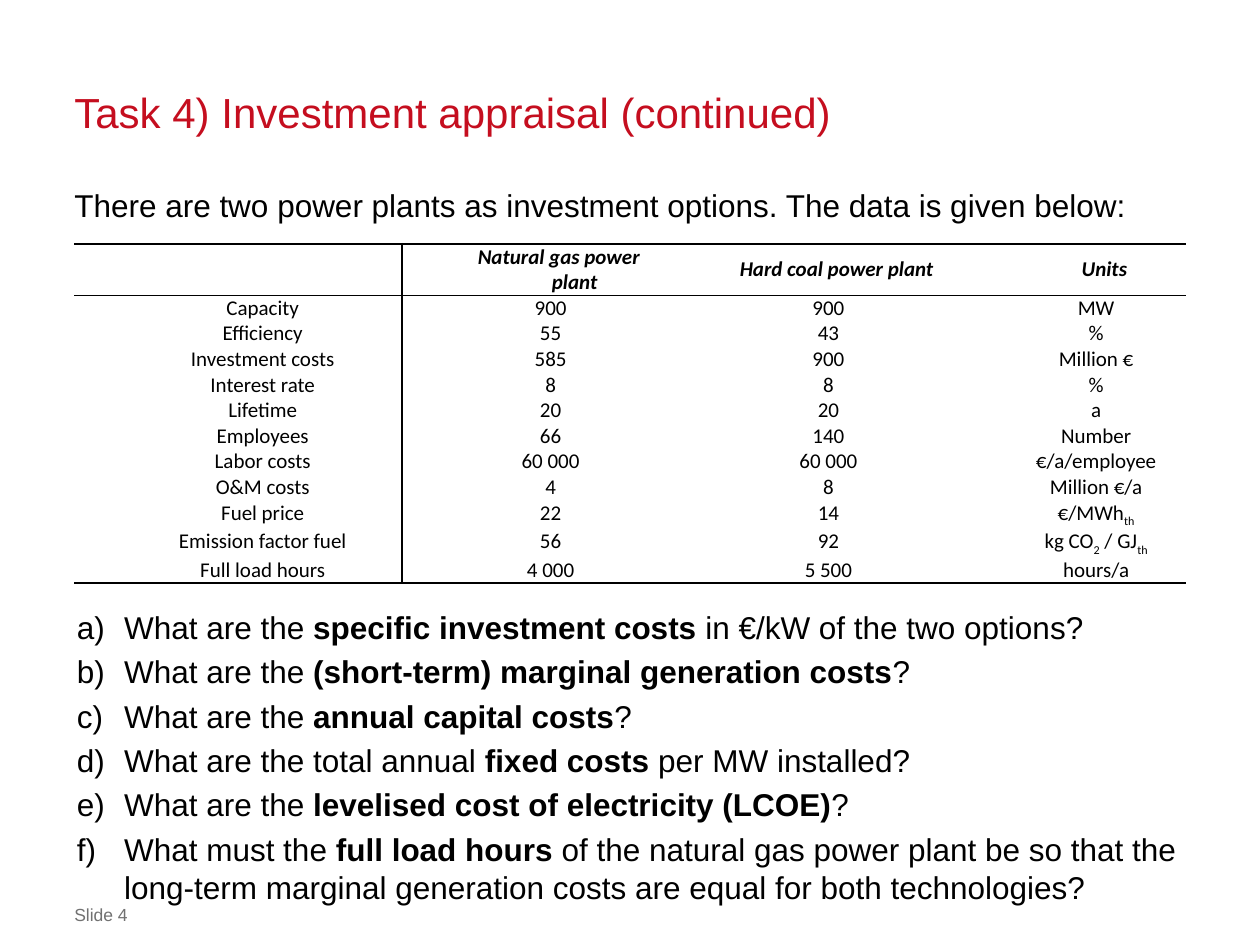
from lxml import etree
from pptx import Presentation
from pptx.dml.color import RGBColor
from pptx.enum.text import MSO_ANCHOR, PP_ALIGN
from pptx.oxml.ns import qn
from pptx.util import Pt

TOP = MSO_ANCHOR.TOP
MIDDLE = MSO_ANCHOR.MIDDLE
CENTER = PP_ALIGN.CENTER
LEFT = PP_ALIGN.LEFT

BLACK = "000000"
RED = "C50E1F"
GREY = "717171"
MARGIN = 42.5
CONTENT_WIDTH = 635
COLUMN_WIDTHS = [187.2, 141.8, 175.7, 130.3]
HEADER_HEIGHT = 29.3
ROW_HEIGHT = 14.65

PLANT_DATA = [
    ["", "Natural gas power plant", "Hard coal power plant", "Units"],
    ["Capacity", "900", "900", "MW"],
    ["Efficiency", "55", "43", "%"],
    ["Investment costs", "585", "900", "Million €"],
    ["Interest rate", "8", "8", "%"],
    ["Lifetime", "20", "20", "a"],
    ["Employees", "66", "140", "Number"],
    ["Labor costs", "60 000", "60 000", "€/a/employee"],
    ["O&M costs", "4", "8", "Million €/a"],
    ["Fuel price", "22", "14", "€/MWh|th"],
    ["Emission factor fuel", "56", "92", "kg CO|2| / GJ|th"],
    ["Full load hours", "4 000", "5 500", "hours/a"],
]

QUESTIONS = [
    "What are the |specific investment costs| in €/kW of the two options?",
    "What are the |(short-term) marginal generation costs|?",
    "What are the |annual capital costs|?",
    "What are the total annual |fixed costs| per MW installed?",
    "What are the |levelised cost of electricity (LCOE)|?",
    "What must the |full load hours| of the natural gas power plant be so that "
    "the long-term marginal generation costs are equal for both technologies?",
]


def color(value):
    return RGBColor.from_string(value)


def style_font(font, name, size, value):
    font.name = name
    font.size = Pt(size)
    font.color.rgb = color(value)


def add_marked_runs(paragraph, marked_text):
    for index, part in enumerate(marked_text.split("|")):
        run = paragraph.add_run()
        run.text = part
        yield run, index % 2 == 1


def set_indent(paragraph, margin, first_line):
    properties = paragraph._p.get_or_add_pPr()
    properties.set("marL", str(Pt(margin)))
    properties.set("indent", str(Pt(first_line)))
    return properties


def clear_insets(frame):
    frame.margin_left = frame.margin_right = 0
    frame.margin_top = frame.margin_bottom = 0
    frame.word_wrap = True
    frame.vertical_anchor = TOP


def add_text(slide, top, height, text="", size=18, value=BLACK):
    frame = slide.shapes.add_textbox(
        Pt(MARGIN), Pt(top), Pt(CONTENT_WIDTH), Pt(height)).text_frame
    clear_insets(frame)
    frame.text = text
    for run in frame.paragraphs[0].runs:
        style_font(run.font, "Arial", size, value)
    return frame


def add_title(slide, text):
    title = slide.shapes.title
    title.left, title.top = Pt(MARGIN), Pt(48)
    title.width, title.height = Pt(CONTENT_WIDTH), Pt(54)
    frame = title.text_frame
    clear_insets(frame)
    frame.text = text
    heading = frame.paragraphs[0]
    heading.alignment = LEFT
    heading.line_spacing = Pt(30)
    style_font(heading.runs[0].font, "Arial", 24, RED)


def add_questions(slide):
    frame = add_text(slide, 347.4, 165)
    for index, question in enumerate(QUESTIONS):
        paragraph = frame.add_paragraph() if index else frame.paragraphs[0]
        properties = set_indent(paragraph, 28.4, -27)
        etree.SubElement(properties, qn("a:buFont"), typeface="+mj-lt")
        etree.SubElement(properties, qn("a:buAutoNum"), type="alphaLcParenR")
        paragraph.line_spacing = Pt(21.7)
        if index:
            paragraph.space_before = Pt(3.6)
        for run, marked in add_marked_runs(paragraph, question):
            style_font(run.font, "Arial", 18, BLACK)
            run.font.bold = marked


def set_borders(cell, widths):
    properties = cell._tc.get_or_add_tcPr()
    for side in "LRTB":
        width = widths.get(side, 0)
        border = etree.SubElement(properties, qn(f"a:ln{side}"), w=str(Pt(width)))
        if width:
            fill = etree.SubElement(border, qn("a:solidFill"))
            etree.SubElement(fill, qn("a:srgbClr"), val=BLACK)
        else:
            etree.SubElement(border, qn("a:noFill"))


def cell_borders(row, column):
    widths = {}
    if row == 0:
        widths.update(T=1.5, B=1)
    elif row == 1:
        widths["T"] = 1
    elif row == len(PLANT_DATA) - 1:
        widths["B"] = 1.5
    if column == 0:
        widths["R"] = 1
    elif column == 1:
        widths["L"] = 1
    return widths


def fill_cell(cell, text, is_header):
    cell.margin_left = cell.margin_top = cell.margin_bottom = 0
    cell.margin_right = Pt(5 if is_header else 14.4)
    cell.vertical_anchor = MIDDLE if is_header else TOP
    paragraph = cell.text_frame.paragraphs[0]
    if not text:
        paragraph.font.size = Pt(12)
        return
    set_indent(paragraph, 60.5, -18)
    paragraph.alignment = CENTER
    for run, marked in add_marked_runs(paragraph, text):
        style_font(run.font, "Calibri", 12, BLACK)
        run.font.bold = run.font.italic = is_header
        if marked:
            run.font._element.set("baseline", "-25000")


def add_plant_table(slide):
    heights = [HEADER_HEIGHT] + [ROW_HEIGHT] * (len(PLANT_DATA) - 1)
    table = slide.shapes.add_table(
        len(PLANT_DATA), len(COLUMN_WIDTHS), Pt(MARGIN), Pt(139.5),
        Pt(CONTENT_WIDTH), Pt(sum(heights))).table
    table.first_row = table.horz_banding = False
    for column, width in zip(table.columns, COLUMN_WIDTHS):
        column.width = Pt(width)
    for row, height in zip(table.rows, heights):
        row.height = Pt(height)
    for row, values in enumerate(PLANT_DATA):
        for column, text in enumerate(values):
            cell = table.cell(row, column)
            fill_cell(cell, text, row == 0)
            set_borders(cell, cell_borders(row, column))
            cell.fill.background()


def main():
    deck = Presentation()
    deck.slide_width, deck.slide_height = Pt(720), Pt(540)
    slide = deck.slides.add_slide(deck.slide_layouts[5])
    add_title(slide, "Task 4) Investment appraisal (continued)")
    intro = add_text(
        slide, 105.8, 24,
        "There are two power plants as investment options. The data is given below:")
    intro.paragraphs[0].line_spacing = Pt(22)
    add_plant_table(slide)
    add_questions(slide)
    add_text(slide, 516.5, 12, "Slide 4", 10, GREY)
    deck.save("out.pptx")


if __name__ == "__main__":
    main()
